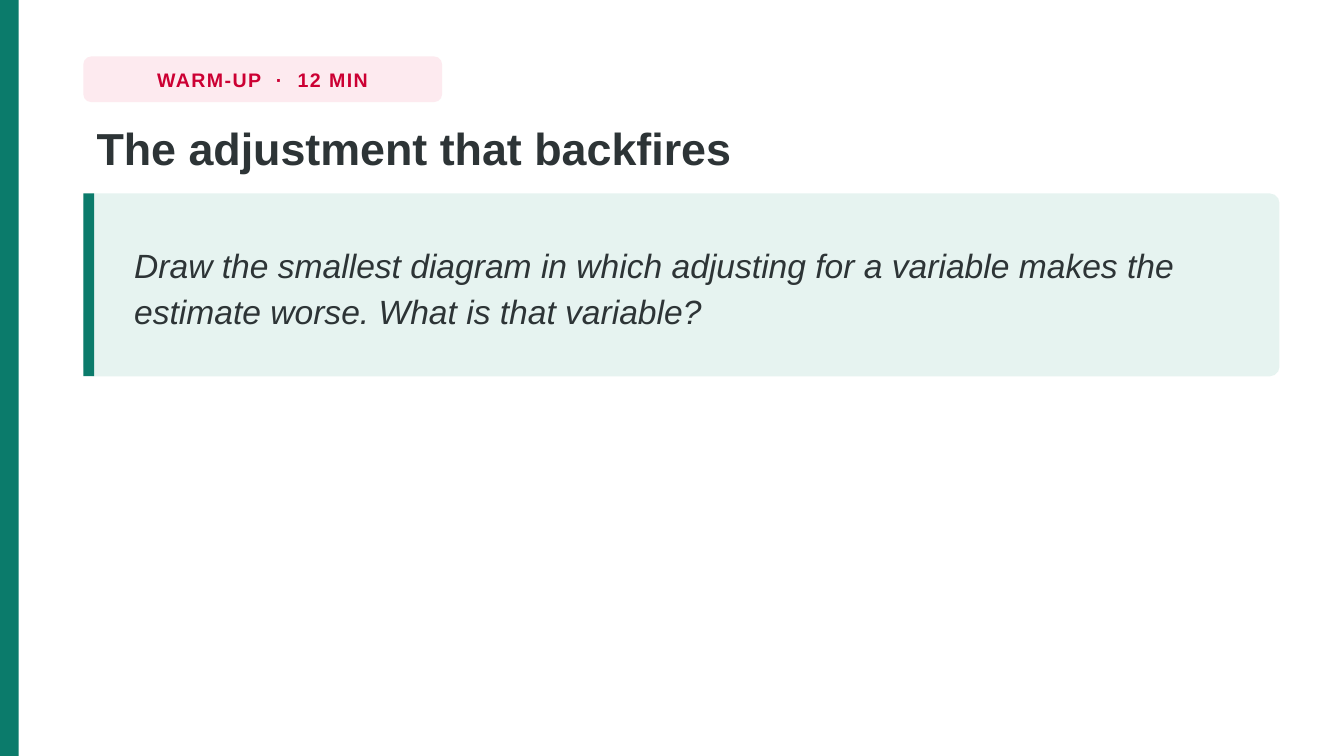
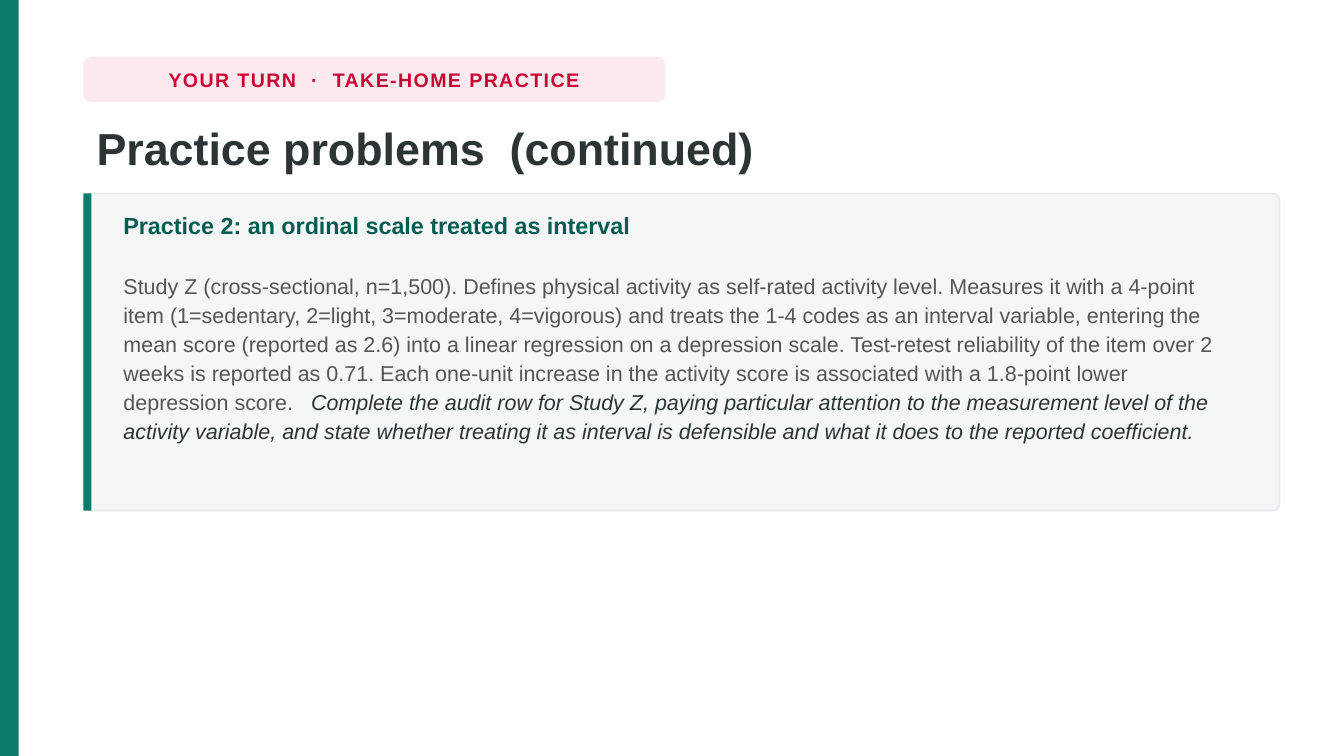
import pptx
import pptx.dml.color
import pptx.enum.shapes
import pptx.enum.text
import pptx.util

Inches = pptx.util.Inches
Pt = pptx.util.Pt
RGBColor = pptx.dml.color.RGBColor
SHAPE = pptx.enum.shapes.MSO_SHAPE
ANCHOR = pptx.enum.text.MSO_ANCHOR
ALIGN = pptx.enum.text.PP_ALIGN

GREEN = RGBColor(0x0B, 0x7B, 0x6B)
DARK_GREEN = RGBColor(0x06, 0x5C, 0x50)
MINT = RGBColor(0xE6, 0xF3, 0xF0)
MIST = RGBColor(0xF4, 0xF7, 0xF6)
BORDER = RGBColor(0xE8, 0xEC, 0xEE)
PINK = RGBColor(0xFD, 0xEA, 0xEF)
RED = RGBColor(0xCC, 0x00, 0x33)
INK = RGBColor(0x2D, 0x34, 0x36)
GRAY = RGBColor(0x55, 0x55, 0x55)

FONT = "Arial"
PAGE_WIDTH = 10
PAGE_HEIGHT = PAGE_WIDTH * 9 / 16
LEFT, CONTENT_WIDTH, CARD_TOP = 0.62, 8.9, 1.44

WARM_UP = {
    "tag": "WARM-UP  ·  12 MIN",
    "tag_width": 2.67,
    "title": "The adjustment that backfires",
    "question": "Draw the smallest diagram in which adjusting for a variable makes the "
                "estimate worse. What is that variable?",
}
PRACTICE = {
    "tag": "YOUR TURN  ·  TAKE-HOME PRACTICE",
    "tag_width": 4.33,
    "title": "Practice problems  (continued)",
    "heading": "Practice 2: an ordinal scale treated as interval",
    "study": "Study Z (cross-sectional, n=1,500). Defines physical activity as self-rated "
             "activity level. Measures it with a 4-point item (1=sedentary, 2=light, "
             "3=moderate, 4=vigorous) and treats the 1-4 codes as an interval variable, "
             "entering the mean score (reported as 2.6) into a linear regression on a "
             "depression scale. Test-retest reliability of the item over 2 weeks is reported "
             "as 0.71. Each one-unit increase in the activity score is associated with a "
             "1.8-point lower depression score.   ",
    "task": "Complete the audit row for Study Z, paying particular attention to the "
            "measurement level of the activity variable, and state whether treating it as "
            "interval is defensible and what it does to the reported coefficient.",
}


def add_block(page, left, top, width, height, fill, radius=0, border=None):
    kind = SHAPE.ROUNDED_RECTANGLE if radius else SHAPE.RECTANGLE
    block = page.shapes.add_shape(
        kind, Inches(left), Inches(top), Inches(width), Inches(height))
    block.shadow.inherit = False
    block.fill.solid()
    block.fill.fore_color.rgb = fill
    if radius:
        block.adjustments[0] = radius / height
    if border is None:
        block.line.fill.background()
    else:
        block.line.color.rgb = border
        block.line.width = Pt(1)


def add_text_frame(page, left, top, width, height, anchor=ANCHOR.TOP):
    box = page.shapes.add_textbox(
        Inches(left), Inches(top), Inches(width), Inches(height))
    box.text_frame.word_wrap = True
    box.text_frame.vertical_anchor = anchor
    return box.text_frame


def write(para, text, size, color, spacing=1.0, bold=False, italic=False):
    para.text = text
    para.line_spacing = spacing
    para.font.name = FONT
    para.font.size = Pt(size)
    para.font.color.rgb = color
    para.font.bold = bold
    para.font.italic = italic


def add_tag(page, text, width):
    place = (LEFT, 0.42, width, 0.34)
    add_block(page, *place, PINK, radius=0.06)
    frame = add_text_frame(page, *place, ANCHOR.MIDDLE)
    frame.word_wrap = False
    para = frame.paragraphs[0]
    para.alignment = ALIGN.CENTER
    write(para, text, 10.5, RED, bold=True)
    for span in para.runs:
        span.font._element.set("spc", "80")


def add_page(deck, content):
    page = deck.slides.add_slide(deck.slide_layouts[6])
    add_block(page, 0, 0, 0.14, PAGE_HEIGHT, GREEN)
    add_tag(page, content["tag"], content["tag_width"])
    title = add_text_frame(page, LEFT, 0.84, CONTENT_WIDTH, 0.56)
    write(title.paragraphs[0], content["title"], 24, INK, 1.02, bold=True)
    return page


def add_card(page, height, fill, stripe_width, radius, border=None):
    add_block(page, LEFT, CARD_TOP, CONTENT_WIDTH, height, fill, radius, border)
    add_block(page, LEFT, CARD_TOP, stripe_width, height, GREEN)


def build_warm_up(deck):
    page = add_page(deck, WARM_UP)
    add_card(page, 1.36, MINT, 0.08, radius=0.07)
    frame = add_text_frame(page, 0.9, 1.49, 8.35, 1.26, ANCHOR.MIDDLE)
    write(frame.paragraphs[0], WARM_UP["question"], 18, INK, 1.16, italic=True)


def build_practice(deck):
    page = add_page(deck, PRACTICE)
    add_card(page, 2.36, MIST, 0.06, radius=0.05, border=BORDER)
    frame = add_text_frame(page, 0.82, 1.52, 8.48, 2.2)
    frame.margin_top = Inches(0.03)
    heading = frame.paragraphs[0]
    write(heading, PRACTICE["heading"], 12.5, DARK_GREEN, 1.12, bold=True)
    heading.space_after = Pt(16.5)

    body = frame.add_paragraph()
    write(body, PRACTICE["study"], 11.5, GRAY, 1.12)
    task = body.add_run()
    task.text = PRACTICE["task"]
    task.font.color.rgb = INK
    task.font.italic = True


def main():
    deck = pptx.Presentation()
    deck.slide_width = Inches(PAGE_WIDTH)
    deck.slide_height = Inches(PAGE_HEIGHT)
    build_warm_up(deck)
    build_practice(deck)
    deck.save("out.pptx")


if __name__ == "__main__":
    main()
